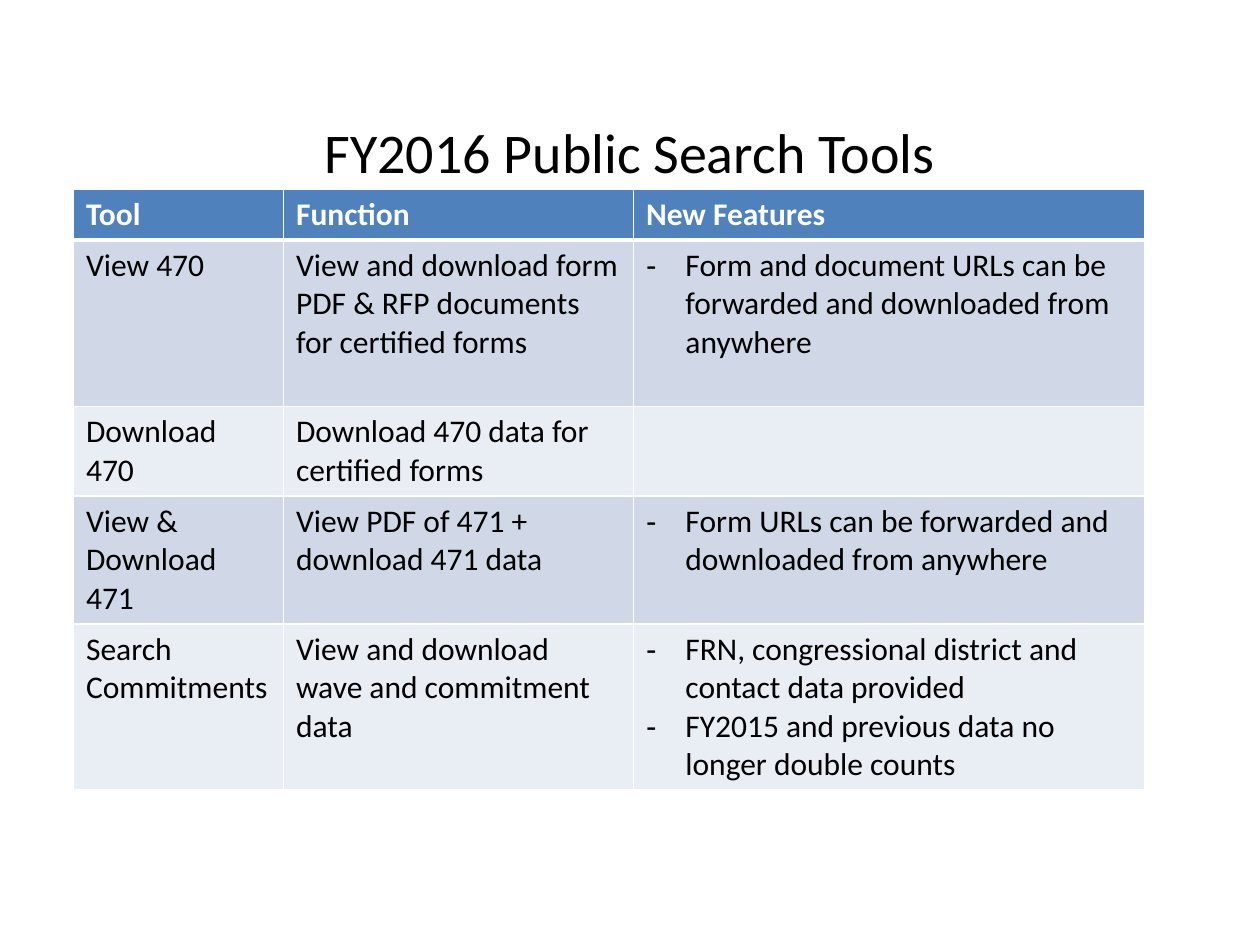
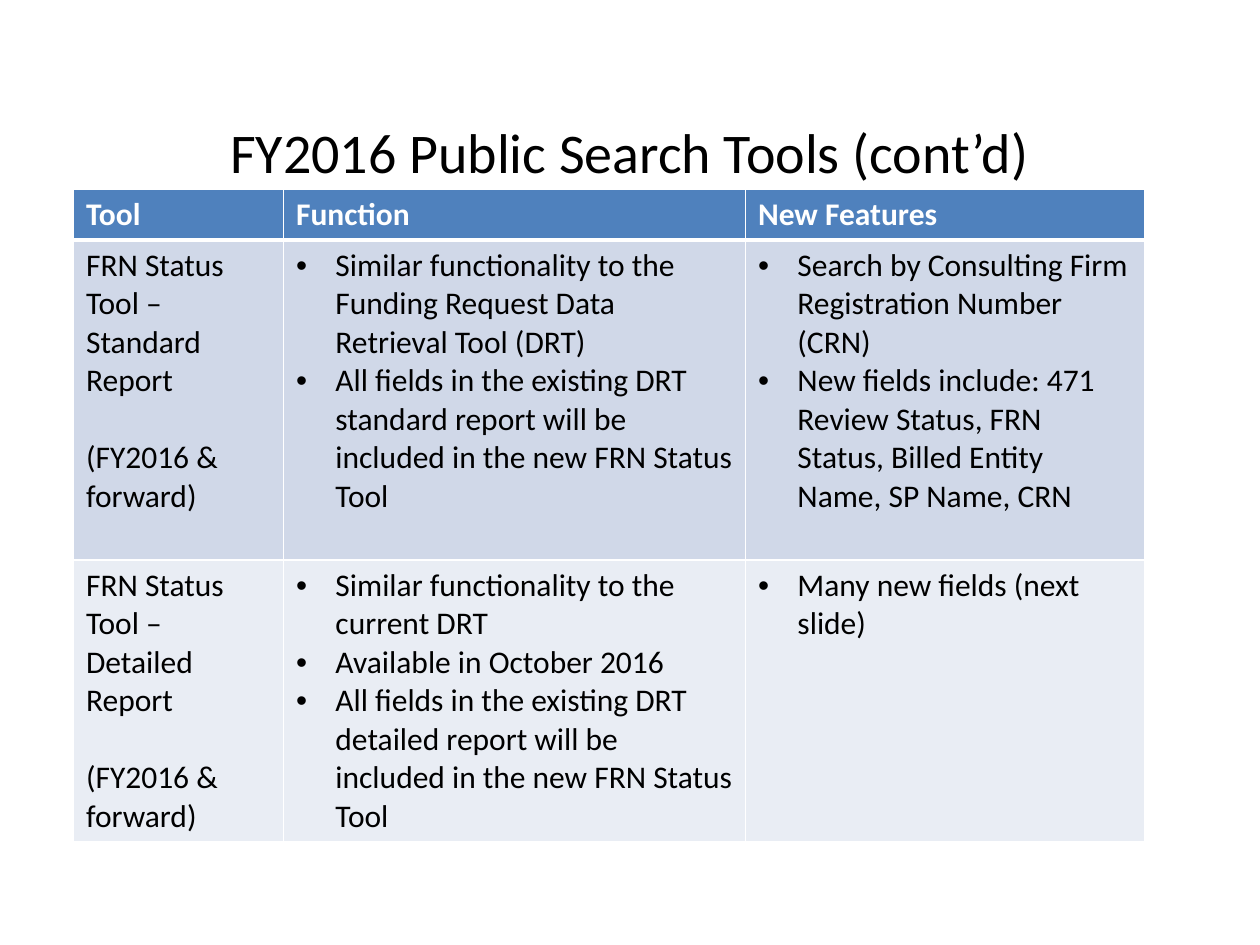
from lxml import etree
from pptx import Presentation
from pptx import util as u
from pptx.dml.color import RGBColor
from pptx.enum import text
from pptx.oxml import ns

Pt = u.Pt

# Shared look
FONT = "Calibri"
BLACK = RGBColor(0x00, 0x00, 0x00)
WHITE = RGBColor(0xFF, 0xFF, 0xFF)
HEADER_BLUE = RGBColor(0x4F, 0x81, 0xBD)
BANDS = (RGBColor(0xD0, 0xD8, 0xE8), RGBColor(0xE9, 0xED, 0xF4))
TITLE_SIZE, BODY_SIZE = 32, 18
LINE_HEIGHT, CELL_PADDING = 21.97, 7.2
BULLET_INDENT = 22.5
TABLE_LEFT, TABLE_TOP = 42, 108
HEADINGS = ("Tool", "Function", "New Features")

# Each row: number of text lines it is tall, then the paragraphs of its cells
SEARCH_TOOLS = [
    (4, ["View 470"],
     ["View and download form PDF & RFP documents for certified forms"],
     ["Form and document URLs can be forwarded and downloaded from anywhere"]),
    (2, ["Download 470"], ["Download 470 data for certified forms"], []),
    (3, ["View & Download 471"], ["View PDF of 471 + download 471 data"],
     ["Form URLs can be forwarded and downloaded from anywhere"]),
    (4, ["Search Commitments"], ["View and download wave and commitment data"],
     ["FRN, congressional district and contact data provided",
      "FY2015 and previous data no longer double counts"]),
]
STATUS_TOOLS = [
    (8, ["FRN Status Tool – Standard Report", "(FY2016 & forward)"],
     ["Similar functionality to the Funding Request Data Retrieval Tool (DRT)",
      "All fields in the existing DRT standard report will be included in "
      "the new FRN Status Tool"],
     ["Search by Consulting Firm Registration Number (CRN)",
      "New fields include: 471 Review Status, FRN Status, Billed Entity Name, "
      "SP Name, CRN"]),
    (7, ["FRN Status Tool – Detailed Report", "(FY2016 & forward)"],
     ["Similar functionality to the current DRT",
      "Available in October 2016",
      "All fields in the existing DRT detailed report will be included in "
      "the new FRN Status Tool"],
     ["Many new fields (next slide)"]),
]


def add_run(p, content, size, color, bold=False):
    r = p.add_run()
    r.text = content
    r.font.name, r.font.size, r.font.bold = FONT, Pt(size), bold
    r.font.color.rgb = color


def add_bullet(p, char):
    props = p._p.get_or_add_pPr()
    props.set("marL", str(Pt(BULLET_INDENT)))
    props.set("indent", str(-Pt(BULLET_INDENT)))
    etree.SubElement(props, ns.qn("a:buFont"), typeface="Arial")
    etree.SubElement(props, ns.qn("a:buChar"), char=char)


def add_title(s, title):
    tf = s.shapes.add_textbox(Pt(36), Pt(21.6), Pt(648), Pt(87.6)).text_frame
    tf.word_wrap = True
    tf.vertical_anchor = text.MSO_ANCHOR.BOTTOM
    p = tf.paragraphs[0]
    p.alignment = text.PP_ALIGN.CENTER
    add_run(p, title, TITLE_SIZE, BLACK)


def set_borders(cell, top, bottom):
    props = cell._tc.get_or_add_tcPr()
    widths = (("L", 1), ("R", 1), ("T", top), ("B", bottom))
    for i, (side, width) in enumerate(widths):
        line = etree.Element(ns.qn(f"a:ln{side}"), w=str(Pt(width)))
        fill = etree.SubElement(line, ns.qn("a:solidFill"))
        etree.SubElement(fill, ns.qn("a:srgbClr"), val=str(WHITE))
        props.insert(i, line)


def fill_cell(cell, paragraphs, fill, color=BLACK, bold=False, bullet=None):
    cell.fill.solid()
    cell.fill.fore_color.rgb = fill
    tf = cell.text_frame
    for i, content in enumerate(paragraphs):
        p = tf.add_paragraph() if i else tf.paragraphs[0]
        if bullet:
            add_bullet(p, bullet)
        elif i:
            p.space_before = Pt(LINE_HEIGHT)
        add_run(p, content, BODY_SIZE, color, bold)


def add_tool_table(s, widths, rows, bullets):
    """Draw the header and banded rows; bullets gives one mark per column."""
    heights = [CELL_PADDING + LINE_HEIGHT * n for n in [1] + [row[0] for row in rows]]
    table = s.shapes.add_table(
        len(heights), len(widths), Pt(TABLE_LEFT), Pt(TABLE_TOP),
        Pt(sum(widths)), Pt(sum(heights))).table
    table.horz_banding = False
    for column, width in zip(table.columns, widths):
        column.width = Pt(width)
    for row, height in zip(table.rows, heights):
        row.height = Pt(height)

    # Header
    for c, heading in enumerate(HEADINGS):
        cell = table.cell(0, c)
        fill_cell(cell, [heading], HEADER_BLUE, WHITE, bold=True)
        set_borders(cell, top=1, bottom=3)

    # Body
    for r, (_, *cells) in enumerate(rows, 1):
        for c, paragraphs in enumerate(cells):
            cell = table.cell(r, c)
            fill_cell(cell, paragraphs, BANDS[(r - 1) % 2], bullet=bullets[c])
            set_borders(cell, top=3 if r == 1 else 1, bottom=1)


def add_slide(prs, title, widths, rows, bullets):
    s = prs.slides.add_slide(prs.slide_layouts[6])
    add_title(s, title)
    add_tool_table(s, widths, rows, bullets)


def main():
    prs = Presentation()
    prs.slide_width, prs.slide_height = Pt(720), Pt(540)
    add_slide(prs, "FY2016 Public Search Tools", (120, 200, 292),
              SEARCH_TOOLS, (None, None, "-"))
    add_slide(prs, "FY2016 Public Search Tools (cont’d)", (120, 264, 228),
              STATUS_TOOLS, (None, "•", "•"))
    prs.save("out.pptx")


if __name__ == "__main__":
    main()
